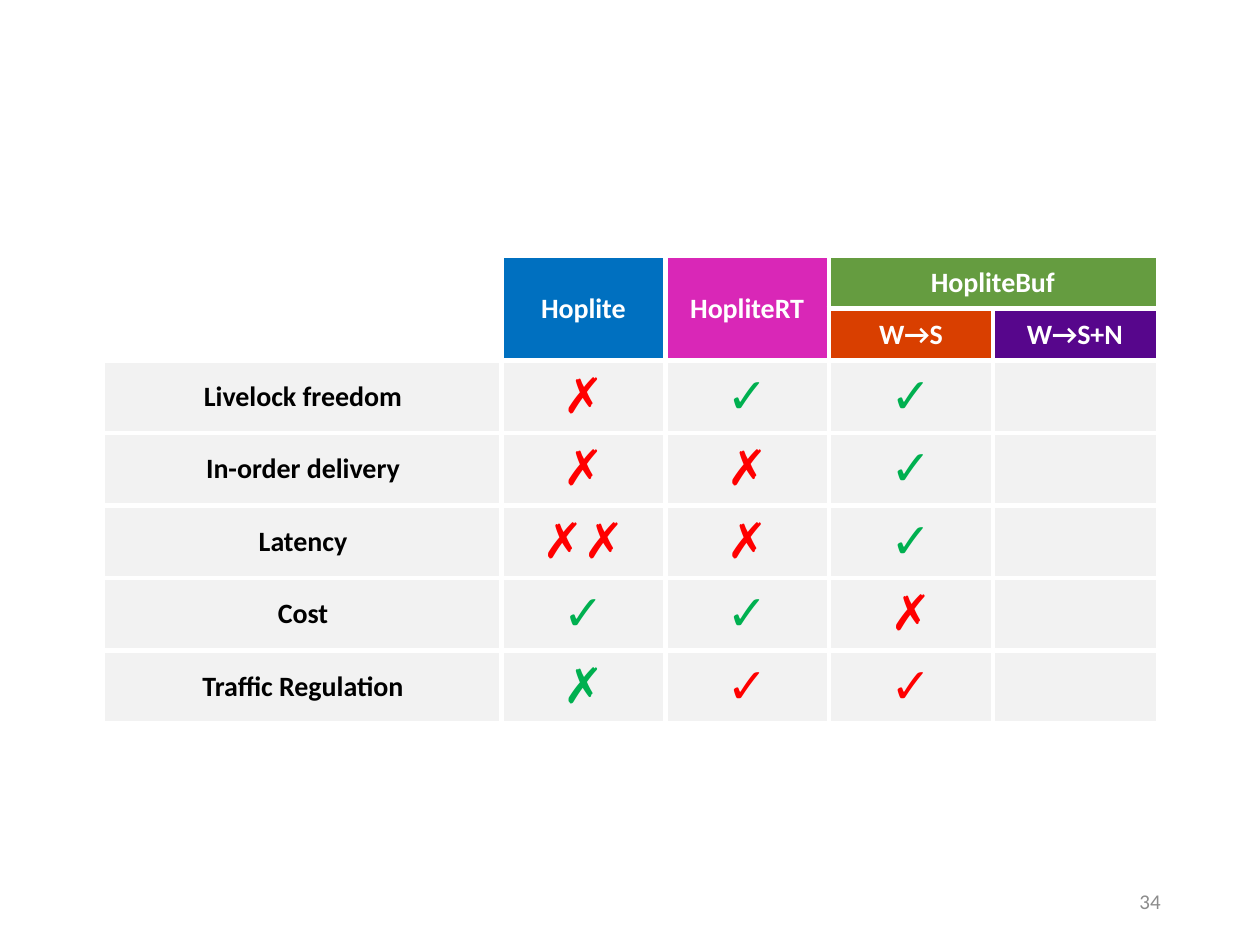
import pptx
import pptx.dml.color
import pptx.enum.text
import pptx.oxml
import pptx.oxml.ns
import pptx.util

COLORS = {
    "white": "FFFFFF", "black": "000000", "blue": "0070C0", "pink": "D927B7",
    "olive": "659C40", "orange": "D93F00", "purple": "57068C",
    "panel": "F2F2F2", "red": "FF0000", "green": "00B050", "gray": "8C8C8C",
}
SLIDE_SIZE = (10, 7.5)
TABLE_BOX = (0.83, 2.04, 8.35, 3.64)
NUMBER_BOX = (7.06, 6.95, 2.25, 0.4)
LABEL_WIDTH, DESIGN_WIDTH = 3.15, 1.3
HEADER_HEIGHT, BODY_HEIGHT = 0.41, 0.57
BORDER_POINTS = 3

LABEL = {"size": pptx.util.Pt(16), "bold": True, "name": "Calibri"}
MARK = LABEL | {"size": pptx.util.Pt(28)}
NUMBER = {"size": pptx.util.Pt(12), "name": "Calibri"}

# row, column, row span, column span, text, fill
HEADERS = [
    (0, 1, 2, 1, "Hoplite", "blue"),
    (0, 2, 2, 1, "HopliteRT", "pink"),
    (0, 3, 1, 2, "HopliteBuf", "olive"),
    (1, 3, 1, 1, "W→S", "orange"),
    (1, 4, 1, 1, "W→S+N", "purple"),
]
CRITERIA = [
    ("Livelock freedom", [("✗", "red"), ("✓", "green"), ("✓", "green")]),
    ("In-order delivery", [("✗", "red"), ("✗", "red"), ("✓", "green")]),
    ("Latency", [("✗✗", "red"), ("✗", "red"), ("✓", "green")]),
    ("Cost", [("✓", "green"), ("✓", "green"), ("✗", "red")]),
    ("Traffic Regulation", [("✗", "green"), ("✓", "red"), ("✓", "red")]),
]


def rgb(color):
    return pptx.dml.color.RGBColor.from_string(COLORS[color])


def inches(box):
    return [pptx.util.Inches(length) for length in box]


def write(frame, text, color, font_format, alignment):
    frame.vertical_anchor = pptx.enum.text.MSO_ANCHOR.MIDDLE
    paragraph = frame.paragraphs[0]
    paragraph.alignment = alignment
    run = paragraph.add_run()
    run.text = text
    run.font.color.rgb = rgb(color)
    for name, value in font_format.items():
        setattr(run.font, name, value)


def fill_cell(cell, fill, text="", color="white", font_format=LABEL):
    cell.fill.solid()
    cell.fill.fore_color.rgb = rgb(fill)
    cell.vertical_anchor = pptx.enum.text.MSO_ANCHOR.MIDDLE
    if text:
        write(cell.text_frame, text, color, font_format,
              pptx.enum.text.PP_ALIGN.CENTER)


def draw_borders(table):
    """Separate the cells with white lines, leaving the left, top and right edges open."""
    for row in range(len(table.rows)):
        for column in range(len(table.columns)):
            cell = table.cell(row, column)
            if cell.is_spanned:
                continue
            sides = {
                "L": column > 0,
                "R": column + cell.span_width < len(table.columns),
                "T": row > 0,
                "B": True,
            }
            properties = cell._tc.get_or_add_tcPr()
            drawn = [side for side, shown in sides.items() if shown]
            for position, side in enumerate(drawn):
                properties.insert(position, pptx.oxml.parse_xml(
                    f'<a:ln{side} {pptx.oxml.ns.nsdecls("a")} '
                    f'w="{pptx.util.Pt(BORDER_POINTS)}"><a:solidFill>'
                    f'<a:srgbClr val="{COLORS["white"]}"/></a:solidFill></a:ln{side}>'))


def add_comparison_table(slide, box):
    row_heights = [HEADER_HEIGHT] * 2 + [BODY_HEIGHT] * len(CRITERIA)
    column_widths = [LABEL_WIDTH] + [DESIGN_WIDTH] * 4
    table = slide.shapes.add_table(
        len(row_heights), len(column_widths), *inches(box)).table
    table.first_row = table.horz_banding = False
    for row, height in zip(table.rows, row_heights):
        row.height = pptx.util.Inches(height)
    for column, width in zip(table.columns, column_widths):
        column.width = pptx.util.Inches(width)

    table.cell(0, 0).merge(table.cell(1, 0))
    table.cell(0, 0).fill.background()
    for row, column, height, width, text, fill in HEADERS:
        cell = table.cell(row, column)
        if height * width > 1:
            cell.merge(table.cell(row + height - 1, column + width - 1))
        fill_cell(cell, fill, text)

    for row, (criterion, marks) in enumerate(CRITERIA, start=2):
        fill_cell(table.cell(row, 0), "panel", criterion, "black")
        for column, (mark, color) in enumerate(marks, start=1):
            fill_cell(table.cell(row, column), "panel", mark, color, MARK)
        fill_cell(table.cell(row, 4), "panel")
    draw_borders(table)


def add_slide_number(slide, box, number):
    frame = slide.shapes.add_textbox(*inches(box)).text_frame
    frame.word_wrap = True
    write(frame, number, "gray", NUMBER, pptx.enum.text.PP_ALIGN.RIGHT)


def main():
    presentation = pptx.Presentation()
    presentation.slide_width, presentation.slide_height = inches(SLIDE_SIZE)
    slide = presentation.slides.add_slide(presentation.slide_layouts[6])
    add_comparison_table(slide, TABLE_BOX)
    add_slide_number(slide, NUMBER_BOX, "34")
    presentation.save("out.pptx")


if __name__ == "__main__":
    main()
